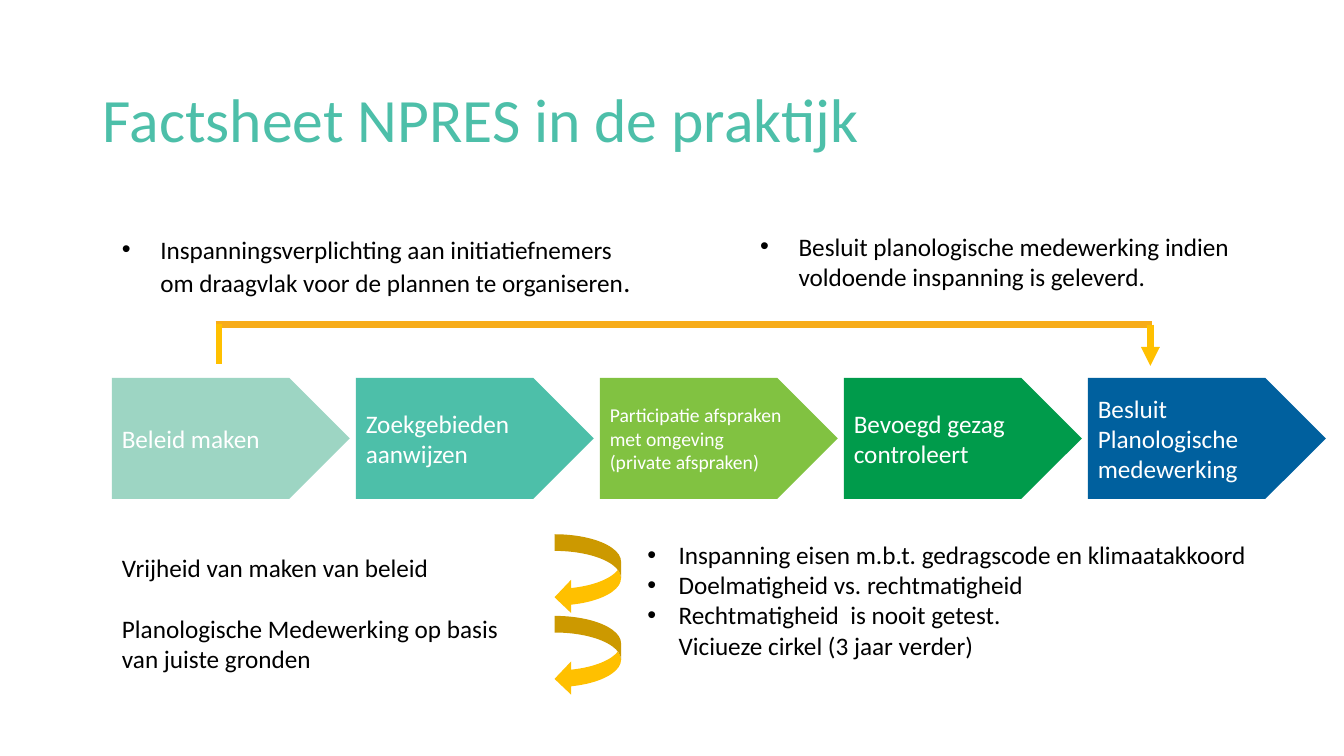
from lxml.etree import SubElement
from pptx import Presentation
from pptx.dml.color import RGBColor as Rgb
from pptx.enum.shapes import MSO_CONNECTOR as Link, MSO_SHAPE as Shape
from pptx.enum.text import MSO_ANCHOR as Anchor, MSO_AUTO_SIZE as Fit, PP_ALIGN as Align
from pptx.oxml.ns import qn
from pptx.util import Inches, Pt

COLORS = {
    "title": "4DBFA9", "text": "000000", "white": "FFFFFF",
    "mint": "9DD5C3", "teal": "4DBFA9", "lime": "81C241",
    "green": "009B4B", "blue": "00609E",
    "amber": "F7AC1A", "gold": "FFC000",
}
FIRST_COL, COL_PITCH = 1.11, 2.42
STEP_TOP, STEP_WIDTH, STEP_HEIGHT = 3.75, 2.36, 1.2
LOOP_LEFT, LOOP_TOP, LOOP_PITCH = 5.5, 5.3, 0.81


def format_text(frame, size, color, anchor):
    frame.word_wrap = True
    frame.auto_size = Fit.NONE
    frame.vertical_anchor = anchor
    for paragraph in frame.paragraphs:
        paragraph.alignment = Align.LEFT
        paragraph.space_before = Pt(0)
        for run in paragraph.runs:
            run.font.name = "Calibri"
            run.font.size = Pt(size)
            run.font.bold = False
            run.font.color.rgb = Rgb.from_string(COLORS[color])


def set_bullet(paragraph, indent):
    properties = paragraph._p.get_or_add_pPr()
    properties.set("marL", str(Inches(indent)))
    properties.set("indent", str(-Inches(indent)))
    if indent:
        SubElement(properties, qn("a:buFont")).set("typeface", "Arial")
        SubElement(properties, qn("a:buChar")).set("char", "•")
    else:
        SubElement(properties, qn("a:buNone"))


deck = Presentation()
deck.slide_width, deck.slide_height = Inches(13.33), Inches(7.5)
slide = deck.slides.add_slide(deck.slide_layouts.get_by_name("Comparison"))
shapes = slide.shapes

title = shapes.title
title.left, title.top, title.width, title.height = map(Inches, (0.92, 0.84, 11.5, 1.45))
title.text_frame.text = "Factsheet NPRES in de praktijk"
format_text(title.text_frame, 44, "title", Anchor.TOP)
title.text_frame.paragraphs[0].line_spacing = 0.9

notes = [
    (1, (FIRST_COL, 2.27, 5.93, 0.74), 0.38,
     ["Inspanningsverplichting aan initiatiefnemers\vom draagvlak voor de plannen te organiseren"]),
    (3, (7.44, 2.24, 5.44, 1.01), 0.38,
     ["Besluit planologische medewerking indien\vvoldoende inspanning is geleverd."]),
    (2, (FIRST_COL, 5.43, 4.39, 1.32), 0,
     ["Vrijheid van maken van beleid",
      "Planologische Medewerking op basis\vvan juiste gronden"]),
    (4, (6.32, 5.3, 6.98, 1.62), 0.31,
     ["Inspanning eisen m.b.t. gedragscode en klimaatakkoord",
      "Doelmatigheid vs. rechtmatigheid",
      "Rechtmatigheid  is nooit getest.\vViciueze cirkel (3 jaar verder)"]),
]
bodies = {body.placeholder_format.idx: body for body in slide.placeholders}
for idx, box, indent, lines in notes:
    note = bodies[idx]
    note.left, note.top, note.width, note.height = map(Inches, box)
    note.text_frame.text = "\n".join(lines)
    for paragraph in note.text_frame.paragraphs:
        set_bullet(paragraph, indent)
    format_text(note.text_frame, 18, "text", Anchor.TOP)

full_stop = bodies[1].text_frame.paragraphs[0].add_run()
full_stop.text = "."
format_text(bodies[1].text_frame, 18, "text", Anchor.TOP)
full_stop.font.size = Pt(20)
bodies[2].text_frame.paragraphs[1].space_before = Pt(22)

feedback_route = [
    ((2.14, 3.22), (11.43, 3.22), "amber", False),
    ((11.41, 3.22), (11.41, 3.63), "gold", True),
    ((2.17, 3.21), (2.17, 3.61), "gold", False),
]
for start, end, color, has_head in feedback_route:
    segment = shapes.add_connector(Link.STRAIGHT, *map(Inches, start + end))
    segment.line.width = Pt(4.5)
    segment.line.color.rgb = Rgb.from_string(COLORS[color])
    if has_head:
        SubElement(segment.line._get_or_add_ln(), qn("a:tailEnd")).set("type", "triangle")
    SubElement(segment._element.spPr, qn("a:effectLst"))

steps = [
    ("Beleid maken", "mint", 18),
    ("Zoekgebieden aanwijzen", "teal", 18),
    ("Participatie afspraken met omgeving\n(private afspraken)", "lime", 14),
    ("Bevoegd gezag controleert", "green", 18),
    ("Besluit\nPlanologische medewerking", "blue", 18),
]
for col, (label, color, size) in enumerate(steps):
    step = shapes.add_shape(
        Shape.PENTAGON, Inches(FIRST_COL + col * COL_PITCH), Inches(STEP_TOP),
        Inches(STEP_WIDTH), Inches(STEP_HEIGHT))
    step.shadow.inherit = False
    step.fill.solid()
    step.fill.fore_color.rgb = Rgb.from_string(COLORS[color])
    step.line.fill.background()
    step.text_frame.text = label
    format_text(step.text_frame, size, "white", Anchor.MIDDLE)

for row in range(2):
    loop = shapes.add_shape(
        Shape.CURVED_LEFT_ARROW, Inches(LOOP_LEFT), Inches(LOOP_TOP + row * LOOP_PITCH),
        Inches(0.66), Inches(0.79))
    loop.shadow.inherit = False
    loop.fill.solid()
    loop.fill.fore_color.rgb = Rgb.from_string(COLORS["gold"])
    loop.line.fill.background()

deck.save("out.pptx")
